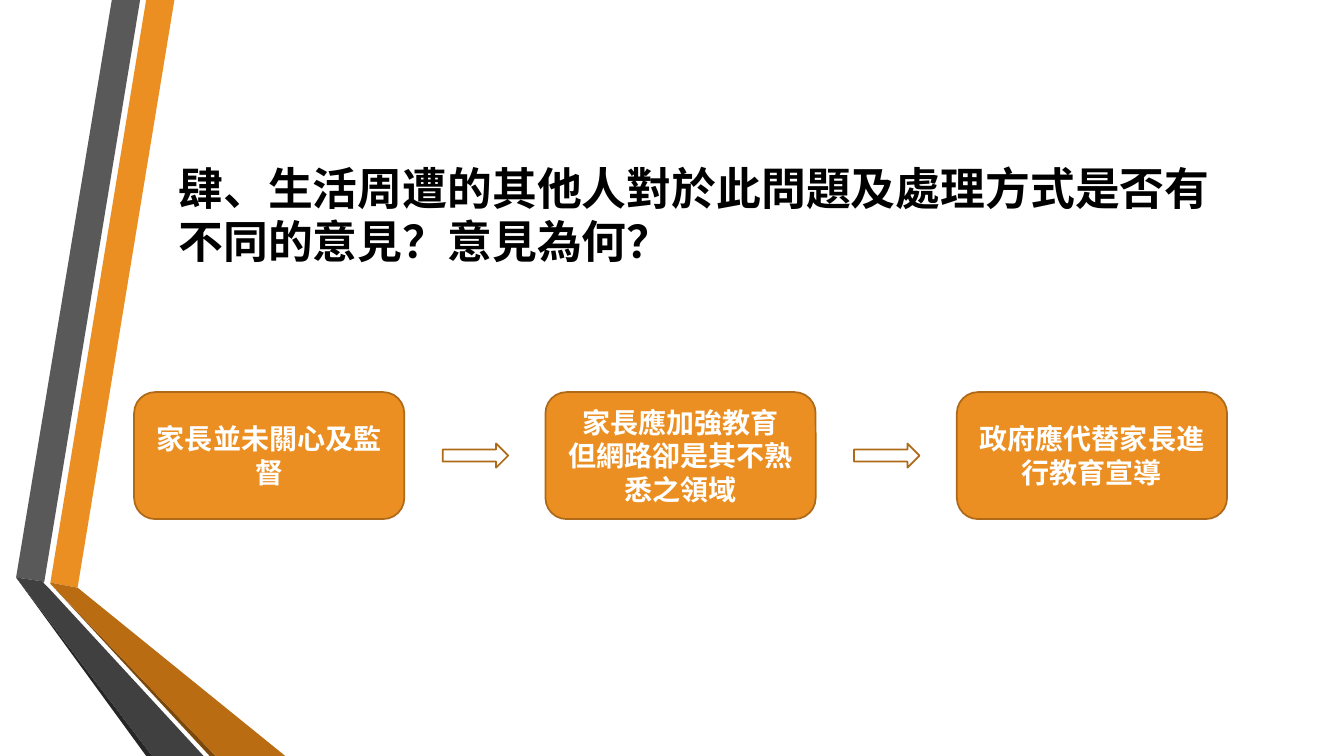
from pptx import Presentation
from pptx.dml.color import RGBColor
from pptx.enum.shapes import MSO_SHAPE as Shape
from pptx.enum.text import MSO_ANCHOR as Anchor, MSO_AUTO_SIZE as AutoSize, PP_ALIGN as Align
from pptx.util import Pt

PX = 9144
FONT = "Calibri"
ORANGE = "EB8F22"
OUTLINE = "AE6A19"

RIBBONS = [
    (ORANGE, [(50, 578), (77, 583), (173, 0), (145, 0)]),
    ("595959", [(139, 0), (111, 0), (16, 573), (44, 577)]),
    ("262626", [(16, 573), (145, 750), (151, 750)]),
    ("7B480B", [(50, 579), (208, 750), (214, 750)]),
    ("B96C11", [(50, 578), (50, 579), (214, 750), (283, 750), (77, 583)]),
    ("404040", [(202, 750), (48, 583), (43, 578), (44, 577), (16, 573), (151, 750)]),
]
STEPS = [
    ["家長並未關心及監督"],
    ["家長應加強教育", "但網路卻是其不熟悉之領域"],
    ["政府應代替家長進行教育宣導"],
]


def color(value):
    return RGBColor.from_string(value)


def format_paragraph(paragraph, size, text_color, alignment):
    paragraph.alignment = alignment
    paragraph.font.name = FONT
    paragraph.font.size = Pt(size)
    paragraph.font.bold = True
    paragraph.font.color.rgb = color(text_color)


def add_preset(slide, preset, left, top, width, height):
    shape = slide.shapes.add_shape(preset, left * PX, top * PX, width * PX, height * PX)
    shape.shadow.inherit = False
    shape.line.color.rgb = color(OUTLINE)
    shape.line.width = Pt(1.25)
    return shape


def add_ribbons(slide, left, top):
    for fill, points in RIBBONS:
        start, *rest = [(left + x, top + y) for x, y in points]
        builder = slide.shapes.build_freeform(*start, scale=PX)
        builder.add_line_segments(rest, close=True)
        ribbon = builder.convert_to_shape()
        ribbon.shadow.inherit = False
        ribbon.fill.solid()
        ribbon.fill.fore_color.rgb = color(fill)
        ribbon.line.fill.background()


def add_title(slide, text, left, top, width, height):
    title = slide.shapes.title
    title.left, title.top = left * PX, top * PX
    title.width, title.height = width * PX, height * PX
    frame = title.text_frame
    frame.text = text
    frame.word_wrap = True
    frame.auto_size = AutoSize.NONE
    frame.vertical_anchor = Anchor.TOP
    format_paragraph(frame.paragraphs[0], 32, "000000", Align.LEFT)


def add_step(slide, lines, left, top, width, height):
    step = add_preset(slide, Shape.ROUNDED_RECTANGLE, left, top, width, height)
    step.fill.solid()
    step.fill.fore_color.rgb = color(ORANGE)
    frame = step.text_frame
    frame.text = "\n".join(lines)
    frame.word_wrap = True
    frame.vertical_anchor = Anchor.MIDDLE
    for paragraph in frame.paragraphs:
        format_paragraph(paragraph, 20, "FFFFFF", Align.CENTER)


def add_process(slide, left, top, width, height):
    step_width, arrow_width, arrow_height = 268, 65, 24
    gap = (width - len(STEPS) * step_width) // (len(STEPS) - 1)
    for index, lines in enumerate(STEPS):
        step_left = left + index * (step_width + gap)
        add_step(slide, lines, step_left, top, step_width, height)
        if index:
            arrow = add_preset(
                slide, Shape.RIGHT_ARROW,
                step_left - (gap + arrow_width) // 2,
                top + (height - arrow_height) // 2,
                arrow_width, arrow_height,
            )
            arrow.fill.background()


def main():
    presentation = Presentation()
    presentation.slide_width = 1333 * PX
    presentation.slide_height = 750 * PX
    slide = presentation.slides.add_slide(presentation.slide_layouts[5])
    add_ribbons(slide, 0, 0)
    add_title(slide, "肆、生活周遭的其他人對於此問題及處理方式是否有不同的意見？意見為何？",
              167, 154, 1050, 118)
    add_process(slide, 133, 389, 1084, 126)
    presentation.save("out.pptx")


if __name__ == "__main__":
    main()
